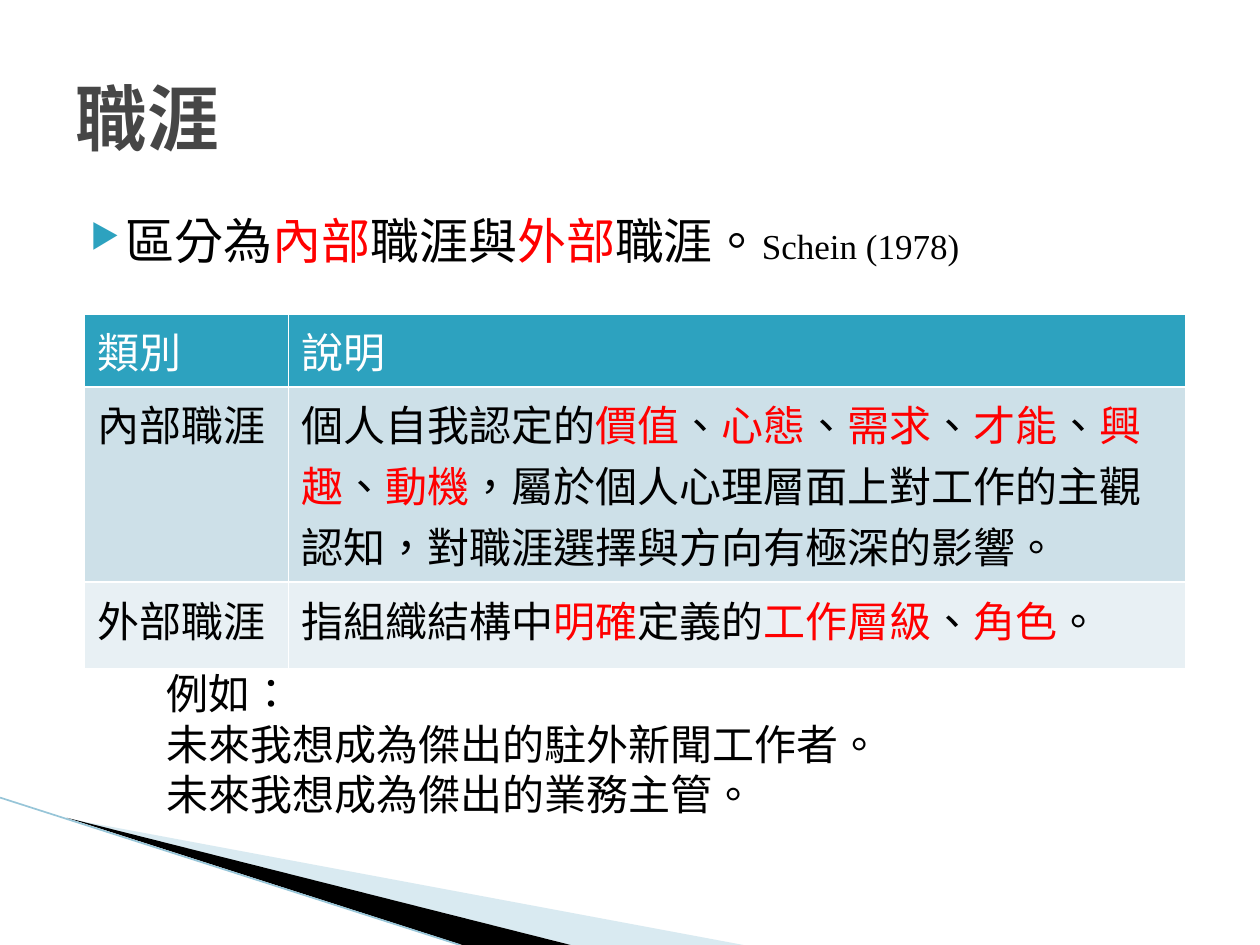
import pptx
import pptx.util
import pptx.dml.color
import pptx.enum.text
import pptx.enum.shapes
import pptx.oxml
import pptx.oxml.ns
from pptx.util import Inches, Pt

SERIF = "Times New Roman"
SANS = "Noto Sans CJK SC"
BLACK, WHITE, RED, TEAL = "000000", "FFFFFF", "FF0000", "2DA2BF"
MID = pptx.enum.text.MSO_ANCHOR.MIDDLE


def rgb(code):
    return pptx.dml.color.RGBColor.from_string(code)


def add_xml(node, tag, **attrs):
    part = pptx.oxml.ns.qn(tag)
    child = node.makeelement(part, attrs)
    node.append(child)
    return child


def style(run, size, color, face, bold=False):
    font = run.font
    font.size, font.bold, font.name = Pt(size), bold, face
    font.color.rgb = rgb(color)
    # Traditional Chinese centres the punctuation marks
    font._element.set("lang", "zh-TW")
    add_xml(font._element, "a:ea", typeface=SANS)


def write(para, text, size, color=BLACK, face=SERIF, bold=False):
    """Every second part between bars is red."""
    for i, part in enumerate(text.split("|")):
        if part:
            run = para.add_run()
            run.text = part
            style(run, size, RED if i % 2 else color, face, bold)


def text_box(slide, box):
    frame = slide.shapes.add_textbox(*map(Inches, box)).text_frame
    frame.word_wrap = True
    return frame


def add_wedge(slide, points, color, alpha=None):
    build = slide.shapes.build_freeform(
        Inches(points[0][0]), Inches(points[0][1]))
    build.add_line_segments([(Inches(x), Inches(y)) for x, y in points[1:]])
    wedge = build.convert_to_shape()
    wedge.shadow.inherit = False
    wedge.fill.solid()
    wedge.fill.fore_color.rgb = rgb(color)
    wedge.line.fill.background()
    if alpha:
        tint = wedge._element.spPr.find(".//" + pptx.oxml.ns.qn("a:srgbClr"))
        add_xml(tint, "a:alpha", val=str(alpha * 1000))


def add_corner(slide):
    add_wedge(slide, [(0.55, 6.5), (5.9, 7.5), (4.53, 7.5)], "A0CBDC", 40)
    add_wedge(slide, [(0.53, 6.49), (4.53, 7.5), (3.67, 7.5)], BLACK)
    edge = slide.shapes.add_connector(
        pptx.enum.shapes.MSO_CONNECTOR.STRAIGHT,
        Inches(0), Inches(6.33), Inches(3.65), Inches(7.5))
    edge.line.color.rgb = rgb("97C5D8")
    edge.line.width = Pt(0.95)
    add_xml(edge._element.spPr, "a:effectLst")


def add_title(slide, box):
    frame = text_box(slide, box)
    frame.vertical_anchor = MID
    write(frame.paragraphs[0], "職涯", 41, "464646", SANS, True)


def add_body(slide, box):
    para = text_box(slide, box).paragraphs[0]
    para.line_spacing = Pt(34)
    props = para._p.get_or_add_pPr()
    props.set("marL", str(Inches(0.4)))
    props.set("indent", str(Inches(-0.28)))
    tint = add_xml(props, "a:buClr")
    add_xml(tint, "a:srgbClr", val=TEAL)
    add_xml(props, "a:buSzPct", val="68000")
    add_xml(props, "a:buChar", char="▶")
    write(para, "區分為|內部|職涯與|外部|職涯。", 28)
    write(para, "Schein (1978)", 20)


def set_edges(cell):
    props = cell._tc.get_or_add_tcPr()
    for i, tag in enumerate(("a:lnL", "a:lnR", "a:lnT", "a:lnB")):
        edge = add_xml(props, tag, w=str(Pt(1)))
        fill = add_xml(edge, "a:solidFill")
        add_xml(fill, "a:srgbClr", val=WHITE)
        props.remove(edge)
        props.insert(i, edge)


def add_grid(slide, box):
    rows = [
        ("類別", "說明"),
        ("內部職涯", "個人自我認定的|價值|、|心態|、|需求|、|才能|、|興趣|、|動機|"
         "，屬於個人心理層面上對工作的主觀認知，對職涯選擇與方向有極深的影響。"),
        ("外部職涯", "指組織結構中|明確|定義的|工作層級|、|角色|。"),
    ]
    fills = [TEAL, "CDE0E8", "E8F0F4"]
    grid = slide.shapes.add_table(3, 2, *map(Inches, box)).table
    for col, width in zip(grid.columns, (1.62, 7.12)):
        col.width = Inches(width)
    # Rows are tall enough for one, three and one lines
    for row, height in zip(grid.rows, (0.58, 1.55, 0.69)):
        row.height = Inches(height)
    for r, texts in enumerate(rows):
        head = r == 0
        for c, text in enumerate(texts):
            cell = grid.cell(r, c)
            cell.fill.solid()
            cell.fill.fore_color.rgb = rgb(fills[r])
            if head:
                cell.vertical_anchor = MID
            set_edges(cell)
            write(cell.text_frame.paragraphs[0], text, 24,
                  WHITE if head else BLACK)


def add_cases(slide, box):
    frame = text_box(slide, box)
    frame.text = "例如：\n未來我想成為傑出的駐外新聞工作者。\n未來我想成為傑出的業務主管。"
    for para in frame.paragraphs:
        para.line_spacing = Pt(28.8)
        style(para.runs[0], 24, BLACK, SANS)


def main():
    deck = pptx.Presentation()
    deck.slide_width, deck.slide_height = Inches(10), Inches(7.5)
    slide = deck.slides.add_slide(deck.slide_layouts[6])
    add_corner(slide)
    add_body(slide, (0.5, 1.62, 9, 4.95))
    add_title(slide, (0.5, 0.3, 9, 1.25))
    add_grid(slide, (0.67, 2.49, 8.74, 2.82))
    add_cases(slide, (1.22, 5.25, 8.11, 1.31))
    deck.save("out.pptx")


if __name__ == "__main__":
    main()
